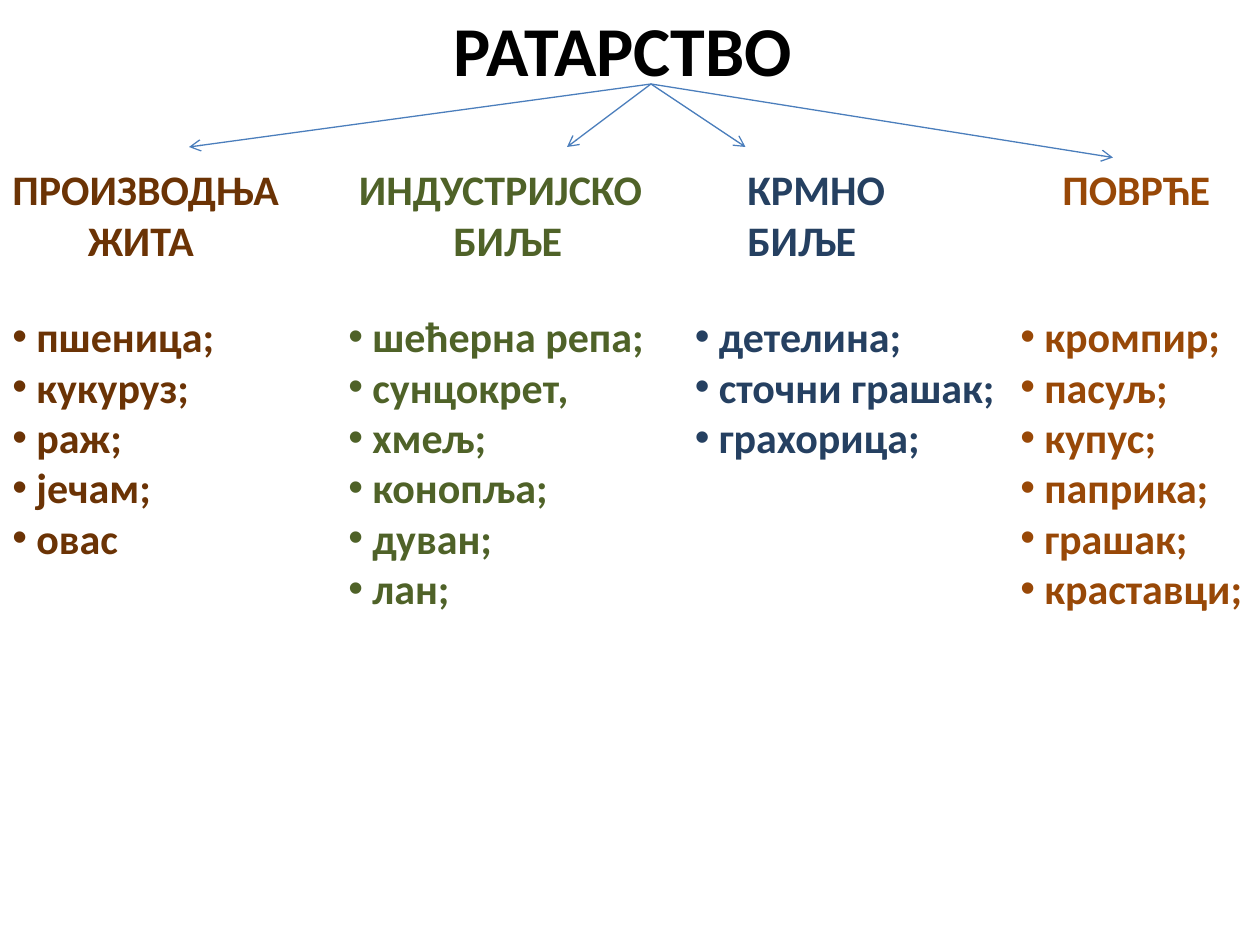
from lxml import etree
from pptx import Presentation
from pptx.dml.color import RGBColor
from pptx.enum.shapes import MSO_CONNECTOR as CONNECTOR
from pptx.enum.text import MSO_ANCHOR as ANCHOR, MSO_AUTO_SIZE as AUTO_SIZE, PP_ALIGN as ALIGN
from pptx.oxml.ns import qn
from pptx.util import Inches, Pt

COLS, ROWS = 120, 90
HEAD_ROW, LIST_ROW = 15, 29
ROOT = (62, 8)

# Heading lines are (text, left indent in inches); boxes are (column, width).
BRANCHES = [
    dict(color="6B3305", head=[("ПРОИЗВОДЊА", 0), ("ЖИТА", 0.6)],
         head_box=(0, 32), list_box=(0, 24), tip=(18, 14),
         crops=["пшеница;", "кукуруз;", "раж;", "јечам;", "овас"]),
    dict(color="4F6228", head=[("ИНДУСТРИЈСКО", 0), ("БИЉЕ", 0.75)],
         head_box=(33, 33), list_box=(32, 33), tip=(54, 14),
         crops=["шећерна репа;", "сунцокрет,", "хмељ;", "конопља;", "дуван;", "лан;"]),
    dict(color="254061", head=[("КРМНО БИЉЕ", 0)],
         head_box=(70, 24), list_box=(65, 32), tip=(71, 14),
         crops=["детелина;", "сточни грашак;", "грахорица;"]),
    dict(color="984807", head=[("ПОВРЋЕ", 0)],
         head_box=(100, 18), list_box=(96, 24), tip=(106, 15),
         crops=["кромпир;", "пасуљ;", "купус;", "паприка;", "грашак;", "краставци;"]),
]


def rgb(hex_color):
    return RGBColor.from_string(hex_color)


def write(p, text, size=24, color="000000", bold=True, font="Calibri", indent=0, bullet=None):
    """Fill a paragraph; with a bullet the indent is a hanging one."""
    pPr = p._p.get_or_add_pPr()
    pPr.set("marL", str(Inches(indent)))
    pPr.set("indent", str(-Inches(indent) if bullet else 0))
    if bullet:
        etree.SubElement(pPr, qn("a:buFont"), typeface="Arial")
        etree.SubElement(pPr, qn("a:buChar"), char=bullet)
    p.alignment = ALIGN.LEFT
    r = p.add_run()
    r.text = text
    r.font.name, r.font.size, r.font.bold = font, Pt(size), bold
    r.font.color.rgb = rgb(color)


class Board:
    line_color = "4B7EBC"
    line_width = 0.75
    bullet_indent = 0.19

    def __init__(self, prs):
        self.slide = prs.slides.add_slide(prs.slide_layouts[5])
        self.col = prs.slide_width / COLS
        self.row = prs.slide_height / ROWS

    def at(self, col, row):
        return round(col * self.col), round(row * self.row)

    def title(self, text, col, row, width, height):
        sp = self.slide.shapes.title
        sp.left, sp.top = self.at(col, row)
        sp.width, sp.height = self.at(width, height)
        tf = sp.text_frame
        tf.word_wrap, tf.auto_size = False, AUTO_SIZE.NONE
        tf.vertical_anchor = ANCHOR.TOP
        write(tf.paragraphs[0], text, size=40)

    def text(self, lines, box, row, color, bullet=None):
        col, width = box
        sp = self.slide.shapes.add_textbox(*self.at(col, row), *self.at(width, 1 + 5 * len(lines)))
        tf = sp.text_frame
        tf.word_wrap, tf.auto_size = True, AUTO_SIZE.SHAPE_TO_FIT_TEXT
        for i, (line, indent) in enumerate(lines):
            p = tf.add_paragraph() if i else tf.paragraphs[0]
            write(p, line, color=color, indent=indent, bullet=bullet)

    def bullets(self, items, box, row, color):
        self.text([(item, self.bullet_indent) for item in items], box, row, color, bullet="•")

    def arrow(self, start, end):
        cn = self.slide.shapes.add_connector(CONNECTOR.STRAIGHT, *self.at(*start), *self.at(*end))
        cn.line.color.rgb = rgb(self.line_color)
        cn.line.width = Pt(self.line_width)
        etree.SubElement(cn.line._get_or_add_ln(), qn("a:tailEnd"), type="arrow")
        etree.SubElement(cn._element.spPr, qn("a:effectLst"))


def main():
    prs = Presentation()
    prs.slide_width, prs.slide_height = Inches(10), Inches(7.5)
    board = Board(prs)
    board.title("РАТАРСТВО", 42, 0, 35, 9.25)
    for b in BRANCHES:
        board.text(b["head"], b["head_box"], HEAD_ROW, b["color"])
        board.arrow(ROOT, b["tip"])
        board.bullets(b["crops"], b["list_box"], LIST_ROW, b["color"])
    prs.save("out.pptx")


if __name__ == "__main__":
    main()
